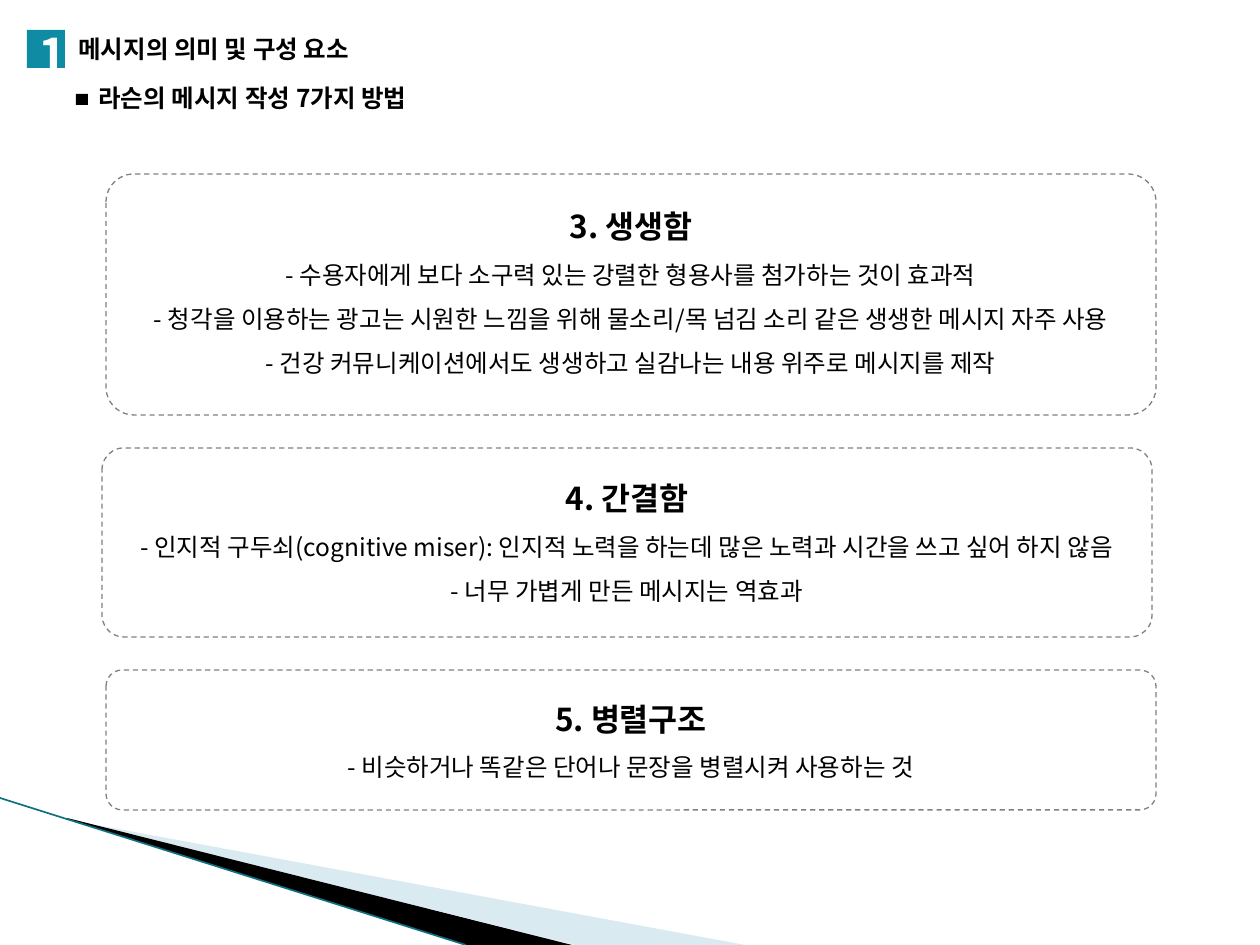
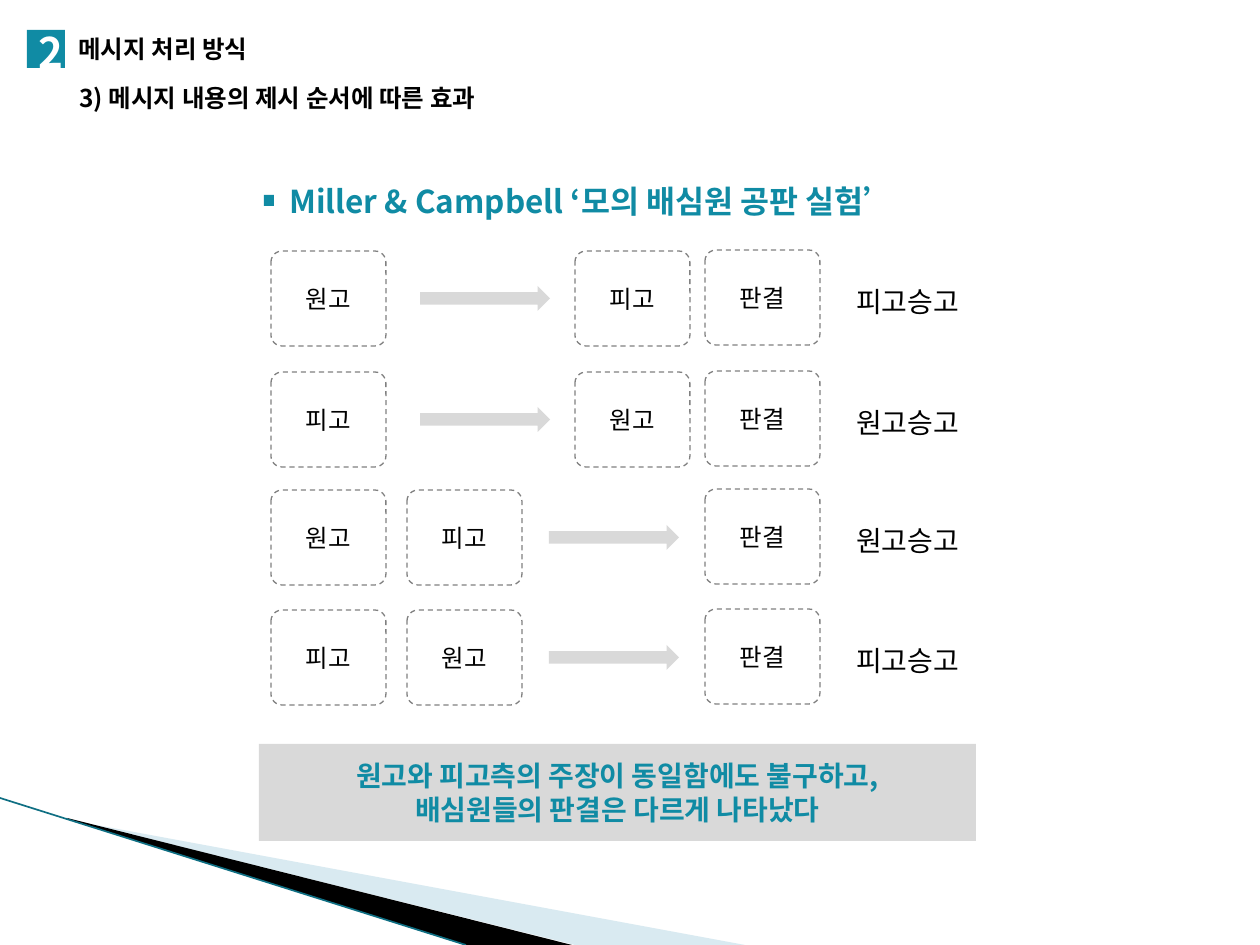
import dataclasses

import pptx
import pptx.dml.color
import pptx.enum.dml
import pptx.enum.shapes
import pptx.enum.text
import pptx.oxml
import pptx.oxml.ns
import pptx.util

SHAPE = pptx.enum.shapes.MSO_SHAPE
ALIGN = pptx.enum.text.PP_ALIGN
ANCHOR = pptx.enum.text.MSO_ANCHOR
EMU_PER_PX = 914400 / 126
WIDTH, HEIGHT = 1260, 945


@dataclasses.dataclass(frozen=True)
class Theme:
    font: str = "Noto Sans CJK KR"
    text: str = "000000"
    accent: str = "108BA4"
    white: str = "FFFFFF"
    gray: str = "D9D9D9"
    outline: str = "808080"
    swoosh_light: str = "A0CBDC"
    swoosh_line: str = "0F6F83"
    body: int = 14
    label: int = 16
    heading: int = 18


def px(n):
    return pptx.util.Emu(round(n * EMU_PER_PX))


def rgb(color):
    return pptx.dml.color.RGBColor.from_string(color)


class Deck:
    def __init__(self, theme):
        self.theme = theme
        self.prs = pptx.Presentation()
        self.prs.slide_width, self.prs.slide_height = px(WIDTH), px(HEIGHT)
        self.s = None

    def slide(self, number, number_size, title):
        self.s = self.prs.slides.add_slide(self.prs.slide_layouts[6])
        self.swoosh()
        self.text(66, 28, 416, 43, title, bold=True)
        self.shape(SHAPE.RECTANGLE, 27, 30, 38, 38, fill=self.theme.accent)
        self.text(39, 26, 24, 59, number, number_size, self.theme.white, bold=True, inset=0)

    def swoosh(self):
        """Draw the wedges and thin line in the bottom left corner."""
        t = self.theme
        light = self.freeform([(69, 820), (745, HEIGHT), (575, HEIGHT), (69, 819)], t.swoosh_light)
        color = light._element.spPr.find(".//" + pptx.oxml.ns.qn("a:srgbClr"))
        alpha = pptx.oxml.parse_xml(f'<a:alpha {pptx.oxml.ns.nsdecls("a")} val="40000"/>')
        color.append(alpha)
        self.freeform([(67, 818), (572, HEIGHT), (465, HEIGHT), (68, 819)], t.text)
        self.line(0, 798, 466, HEIGHT, t.swoosh_line, 0.95)

    def freeform(self, points, fill):
        builder = self.s.shapes.build_freeform(*points[0], scale=EMU_PER_PX)
        builder.add_line_segments(points[1:], close=True)
        sp = builder.convert_to_shape()
        self.paint(sp, fill)
        return sp

    def line(self, x1, y1, x2, y2, color, width):
        cxn = self.s.shapes.add_connector(
            pptx.enum.shapes.MSO_CONNECTOR.STRAIGHT, px(x1), px(y1), px(x2), px(y2))
        cxn.line.color.rgb = rgb(color)
        cxn.line.width = pptx.util.Pt(width)
        effects = pptx.oxml.parse_xml(f'<a:effectLst {pptx.oxml.ns.nsdecls("a")}/>')
        cxn._element.spPr.append(effects)

    def paint(self, sp, fill=None):
        sp.shadow.inherit = False
        sp.line.fill.background()
        if fill:
            sp.fill.solid()
            sp.fill.fore_color.rgb = rgb(fill)
        else:
            sp.fill.background()

    def shape(self, kind, x, y, w, h, fill=None):
        sp = self.s.shapes.add_shape(kind, px(x), px(y), px(w), px(h))
        self.paint(sp, fill)
        return sp

    def dashed_box(self, x, y, w, h):
        sp = self.shape(SHAPE.ROUNDED_RECTANGLE, x, y, w, h)
        sp.adjustments[0] = 0.116
        sp.line.color.rgb = rgb(self.theme.outline)
        sp.line.width = pptx.util.Pt(0.75)
        sp.line.dash_style = pptx.enum.dml.MSO_LINE.DASH
        return sp

    def fill_text(self, sp, lines, size=None, color=None, bold=False, align=ALIGN.CENTER,
                  anchor=ANCHOR.MIDDLE, spacing=None):
        tf = sp.text_frame
        tf.word_wrap = True
        tf.vertical_anchor = anchor
        tf.text = "\n".join(lines)
        for p in tf.paragraphs:
            p.alignment = align
            p.line_spacing = spacing
            for r in p.runs:
                self.style(r, size or self.theme.body, color or self.theme.text, bold)
        return tf

    def style(self, r, size, color, bold):
        r.font.name = self.theme.font
        r.font.size = pptx.util.Pt(size)
        r.font.color.rgb = rgb(color)
        r.font.bold = bold
        ea = pptx.oxml.parse_xml(
            f'<a:ea {pptx.oxml.ns.nsdecls("a")} typeface="{self.theme.font}"/>')
        r._r.get_or_add_rPr().append(ea)

    def text(self, x, y, w, h, line, size=None, color=None, bold=False, inset=None, spacing=None):
        sp = self.s.shapes.add_textbox(px(x), px(y), px(w), px(h))
        tf = self.fill_text(sp, [line], size, color, bold, ALIGN.LEFT, ANCHOR.TOP, spacing)
        if inset is not None:
            tf.margin_left = tf.margin_right = tf.margin_top = tf.margin_bottom = px(inset)

    def method_card(self, x, y, h, heading, points):
        """Draw a wide dashed box with a bold heading above its dash points."""
        lines = [heading] + [f"- {point}" for point in points]
        tf = self.fill_text(self.dashed_box(x, y, 1050, h), lines, anchor=ANCHOR.TOP, spacing=1.5)
        font = tf.paragraphs[0].runs[0].font
        font.size, font.bold = pptx.util.Pt(self.theme.heading), True

    def step(self, x, y, name):
        self.fill_text(self.dashed_box(x, y, 115, 95), [name])


def methods_slide(d):
    d.slide("1", 28, "메시지의 의미 및 구성 요소")
    d.text(86, 77, 348, 43, "라슨의 메시지 작성 7가지 방법", bold=True)
    d.shape(SHAPE.RECTANGLE, 76, 94, 12, 11, fill=d.theme.text)
    d.method_card(106, 174, 241, "3. 생생함", [
        "수용자에게 보다 소구력 있는 강렬한 형용사를 첨가하는 것이 효과적",
        "청각을 이용하는 광고는 시원한 느낌을 위해 물소리/목 넘김 소리 같은 생생한 메시지 자주 사용",
        "건강 커뮤니케이션에서도 생생하고 실감나는 내용 위주로 메시지를 제작"])
    d.method_card(102, 448, 189, "4. 간결함", [
        "인지적 구두쇠(cognitive miser): 인지적 노력을 하는데 많은 노력과 시간을 쓰고 싶어 하지 않음",
        "너무 가볍게 만든 메시지는 역효과"])
    d.method_card(106, 670, 140, "5. 병렬구조", [
        "비슷하거나 똑같은 단어나 문장을 병렬시켜 사용하는 것"])


def trial_slide(d):
    t = d.theme
    d.slide("2", 24, "메시지 처리 방식")
    d.text(67, 77, 440, 43, "3) 메시지 내용의 제시 순서에 따른 효과", bold=True)

    plaintiff, defendant = "원고", "피고"
    delayed, together = (575, 420), (407, 549)  # x of second speaker, x of arrow
    trials = [
        (251, plaintiff, defendant, delayed, defendant),
        (372, defendant, plaintiff, delayed, plaintiff),
        (490, plaintiff, defendant, together, plaintiff),
        (610, defendant, plaintiff, together, defendant),
    ]
    for y, first, second, (second_x, arrow_x), winner in trials:
        d.step(271, y, first)
        d.step(second_x, y, second)
        d.step(705, y - 1, "판결")
        d.shape(SHAPE.RIGHT_ARROW, arrow_x, y + 35, 130, 25, fill=t.gray)
        d.text(844, y + 11, 140, 58, f"{winner}승고", t.label, spacing=1.5)

    verdict = d.shape(SHAPE.RECTANGLE, 259, 744, 717, 97, fill=t.gray)
    d.fill_text(verdict, ["원고와 피고측의 주장이 동일함에도 불구하고,", "배심원들의 판결은 다르게 나타났다"],
                t.label, t.accent, bold=True)
    d.text(277, 176, 650, 51, "Miller & Campbell ‘모의 배심원 공판 실험’", t.heading, t.accent, bold=True)
    d.shape(SHAPE.RECTANGLE, 264, 195, 10, 11, fill=t.accent)


def main():
    d = Deck(Theme())
    methods_slide(d)
    trial_slide(d)
    d.prs.save("out.pptx")


if __name__ == "__main__":
    main()
